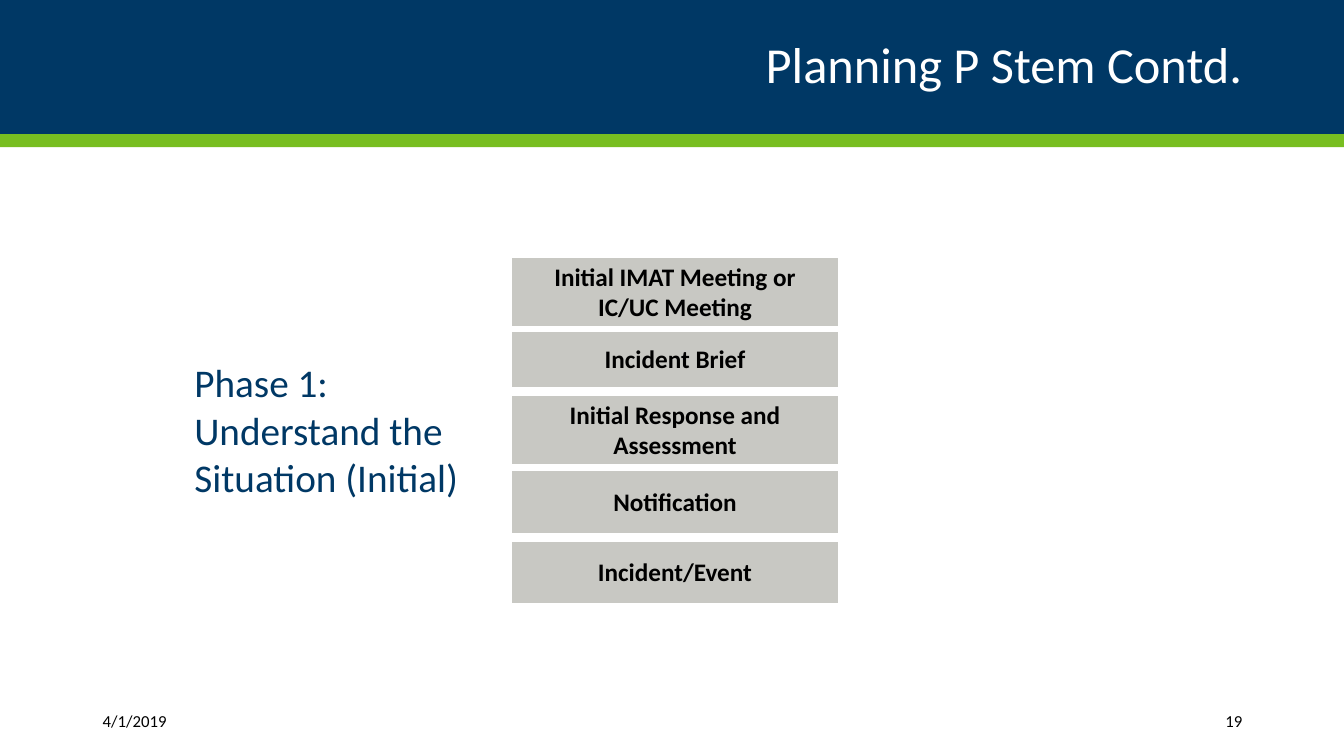
from lxml.etree import SubElement
from pptx import Presentation
from pptx.dml.color import RGBColor
from pptx.enum.shapes import MSO_SHAPE
from pptx.enum.text import MSO_ANCHOR, PP_ALIGN
from pptx.oxml.ns import qn
from pptx.util import Inches, Pt

NAVY = RGBColor(0x00, 0x38, 0x65)
GREEN = RGBColor(0x78, 0xBE, 0x21)
GREY = RGBColor(0xC8, 0xC8, 0xC3)
WHITE = RGBColor(0xFF, 0xFF, 0xFF)
BLACK = RGBColor(0x00, 0x00, 0x00)

STEPS = [
    ("Initial IMAT Meeting or IC/UC Meeting", 2.55, 0.69),
    ("Incident Brief", 3.29, 0.57),
    ("Initial Response and Assessment", 3.92, 0.69),
    ("Notification", 4.67, 0.64),
    ("Incident/Event", 5.37, 0.63),
]


def write(tf, text, size=18, color=BLACK, bold=False, align=PP_ALIGN.LEFT,
          spacing=None, font="Calibri"):
    p = tf.paragraphs[0]
    p.alignment = align
    p.line_spacing = spacing
    r = p.add_run()
    r.text = text
    r.font.name = font
    r.font.size = Pt(size)
    r.font.bold = bold
    r.font.color.rgb = color


class SlideBuilder:
    """Draws bands, text and step boxes on one slide in a shared style."""

    def __init__(self, s):
        self.s = s
        self.borders = {"a:lnL": 1, "a:lnR": 1, "a:lnT": 1, "a:lnB": 3}

    def band(self, top, height, color):
        sp = self.s.shapes.add_shape(MSO_SHAPE.RECTANGLE, 0, Inches(top),
                                     Inches(13.33), Inches(height))
        sp.shadow.inherit = False
        sp.fill.solid()
        sp.fill.fore_color.rgb = color
        sp.line.fill.background()

    def text(self, text, left, top, width, height, anchor=MSO_ANCHOR.MIDDLE, **fmt):
        sp = self.s.shapes.add_textbox(Inches(left), Inches(top),
                                       Inches(width), Inches(height))
        tf = sp.text_frame
        tf.word_wrap = True
        tf.vertical_anchor = anchor
        write(tf, text, **fmt)

    def step(self, text, top, height):
        frame = self.s.shapes.add_table(1, 1, Inches(5.07), Inches(top),
                                        Inches(3.25), Inches(height))
        cell = frame.table.cell(0, 0)
        cell.vertical_anchor = MSO_ANCHOR.MIDDLE
        write(cell.text_frame, text, bold=True, align=PP_ALIGN.CENTER)
        tc_pr = cell._tc.get_or_add_tcPr()
        for side, width in self.borders.items():
            ln = SubElement(tc_pr, qn(side), w=str(Pt(width)))
            fill = SubElement(ln, qn("a:solidFill"))
            SubElement(fill, qn("a:srgbClr"), val=str(WHITE))
        cell.fill.solid()
        cell.fill.fore_color.rgb = GREY


def main():
    prs = Presentation()
    prs.slide_width = Inches(13.33)
    prs.slide_height = Inches(7.5)
    b = SlideBuilder(prs.slides.add_slide(prs.slide_layouts[6]))
    b.band(0, 1.33, NAVY)
    b.band(1.33, 0.13, GREEN)
    b.text("Planning P Stem Contd.", 0.92, 0.17, 11.5, 1, size=36, color=WHITE,
           align=PP_ALIGN.RIGHT, spacing=0.9)
    b.text("4/1/2019", 0.92, 6.95, 1.49, 0.4, size=12)
    b.text("19", 10.82, 6.95, 1.6, 0.4, size=12, align=PP_ALIGN.RIGHT)
    for text, top, height in STEPS:
        b.step(text, top, height)
    b.text("Phase 1: Understand the Situation (Initial)", 1.83, 3.51, 2.93, 1.51,
           anchor=MSO_ANCHOR.TOP, size=28, color=NAVY)
    prs.save("out.pptx")


if __name__ == "__main__":
    main()
